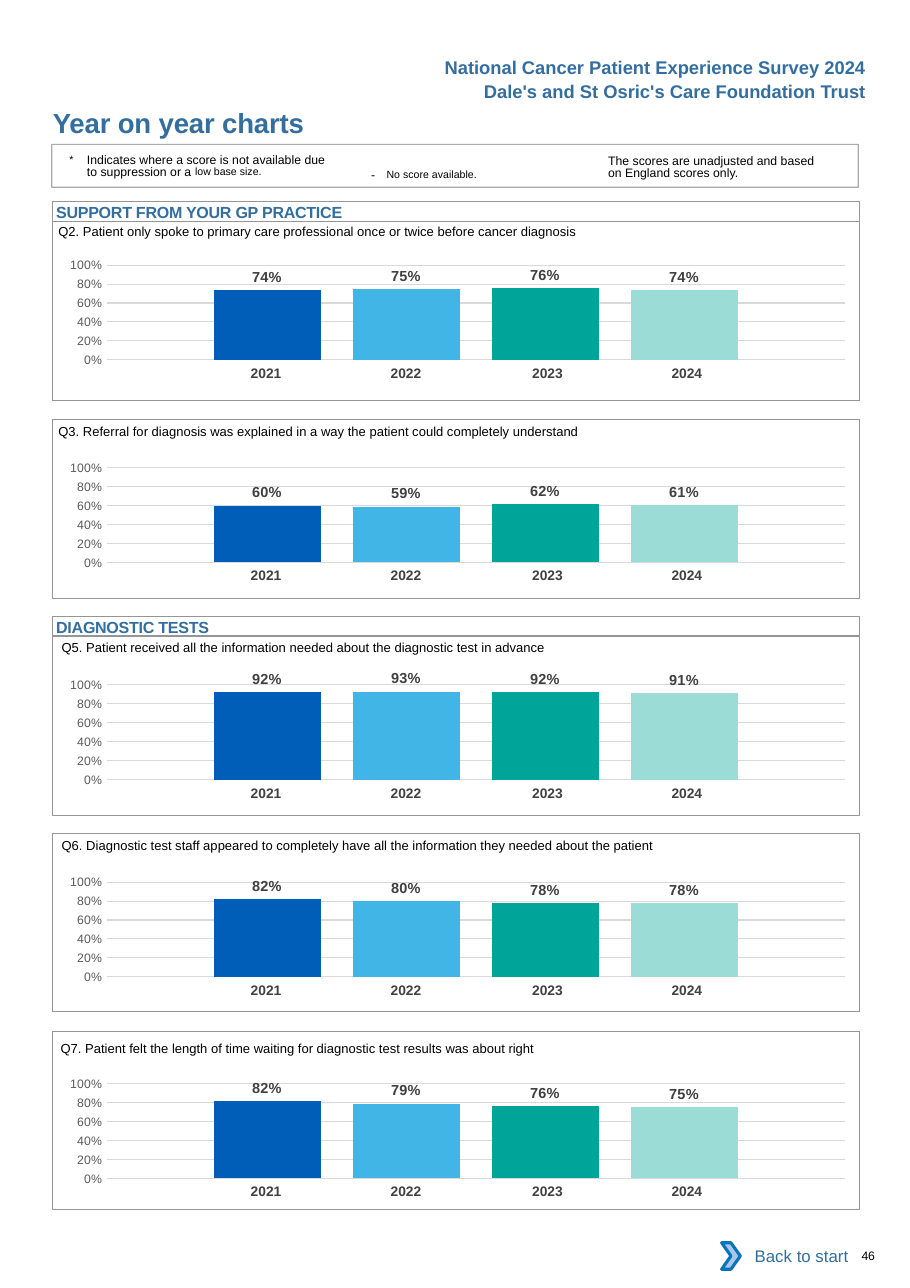
from lxml import etree
from pptx import Presentation
from pptx.chart.data import CategoryChartData
from pptx.dml.color import RGBColor
from pptx.enum.chart import XL_CHART_TYPE, XL_LABEL_POSITION, XL_TICK_MARK
from pptx.enum.shapes import MSO_SHAPE
from pptx.enum.text import MSO_ANCHOR, PP_ALIGN
from pptx.oxml import parse_xml
from pptx.oxml.ns import nsdecls, qn
from pptx.util import Inches, Pt

# Content
TITLE = "Year on year charts"
HEADERS = ["National Cancer Patient Experience Survey 2024",
           "Dale's and St Osric's Care Foundation Trust"]
YEARS = ["2021", "2022", "2023", "2024"]
SECTIONS = [("SUPPORT FROM YOUR GP PRACTICE", 1.83), ("DIAGNOSTIC TESTS", 5.59)]
# question, scores, panel top, then question left, question top and chart top
# (the last two measured from the panel top)
QUESTIONS = [
    ("Q2. Patient only spoke to primary care professional once or twice before cancer diagnosis",
     (0.74, 0.75, 0.76, 0.74), 2.01, 0.53, -0.07, 0.21),
    ("Q3. Referral for diagnosis was explained in a way the patient could completely understand",
     (0.60, 0.59, 0.62, 0.61), 3.81, 0.53, -0.06, 0.25),
    ("Q5. Patient received all the information needed about the diagnostic test in advance",
     (0.92, 0.93, 0.92, 0.91), 5.78, 0.56, -0.07, 0.25),
    ("Q6. Diagnostic test staff appeared to completely have all the information they needed "
     "about the patient",
     (0.82, 0.80, 0.78, 0.78), 7.56, 0.56, -0.05, 0.26),
    ("Q7. Patient felt the length of time waiting for diagnostic test results was about right",
     (0.82, 0.79, 0.76, 0.75), 9.36, 0.55, -0.01, 0.29),
]
# note runs: text, size, baseline shift in %, letter spacing in pt
SUPPRESSED = [("*\t", 12, 3, 0),
              ("Indicates where a score is not available due to suppression or a ", 8, 0, 0),
              ("low base size.", 12, 7, 0)]
NO_SCORE = [("- ", 8, 0, 2.6), ("No score available.", 12, 3, 0)]
UNADJUSTED = [("The scores are unadjusted and based on England scores only.", 8, 0, 0)]

# Layout and colours
LEFT, WIDTH, PANEL_H = 0.48, 7.32, 1.62
CHART_LEFT, CHART_H, YEARS_DROP = 0.39, 1.29, 1.05
YEAR_COLS = [1.27, 1.27, 1.34, 1.27]
YEAR_RIGHT_MARGINS = [0, 0, 0.04, 0.12]
PLOT = {"x": 0.079, "y": 0.145, "w": 0.915, "h": 0.666}
BLUE, GREY, BLACK = "336E9F", "939598", "000000"
BAR_COLORS = ["005EB8", "41B6E6", "00A499", "9CDCD7"]
NO_STYLE = "{2D5ABB26-0587-4C30-8999-92F81FD0307C}"

prs = Presentation()
prs.slide_width, prs.slide_height = Inches(8.26), Inches(11.69)
s = prs.slides.add_slide(prs.slide_layouts[6])


def rgb(value):
    return RGBColor.from_string(value)


def style(font, size, color, bold=False):
    font.name, font.size, font.bold = "Arial", Pt(size), bold
    font.color.rgb = rgb(color)


def set_margins(target, left, top, right, bottom):
    target.margin_left, target.margin_top = Inches(left), Inches(top)
    target.margin_right, target.margin_bottom = Inches(right), Inches(bottom)


def add_run(p, text, size, color, bold=False, shift=0, spacing=0):
    r = p.add_run()
    r.text = text
    style(r.font, size, color, bold)
    rPr = r.font._element
    if shift:
        rPr.set("baseline", str(shift * 1000))
    if spacing:
        rPr.set("spc", str(round(spacing * 100)))


def add_text(box, runs, color=BLACK, bold=False, margins=(0, 0, 0, 0), align=PP_ALIGN.LEFT):
    sp = s.shapes.add_textbox(*map(Inches, box))
    tf = sp.text_frame
    tf.word_wrap = True
    set_margins(tf, *margins)
    p = tf.paragraphs[0]
    p.alignment = align
    for text, size, shift, spacing in runs:
        add_run(p, text, size, color, bold, shift, spacing)
    return p


def add_box(box, line=None, width=0.5, fill=None, kind=MSO_SHAPE.RECTANGLE):
    sp = s.shapes.add_shape(kind, *map(Inches, box))
    sp.shadow.inherit = False
    if fill:
        sp.fill.solid()
        sp.fill.fore_color.rgb = rgb(fill)
    else:
        sp.fill.background()
    if line:
        sp.line.color.rgb = rgb(line)
        sp.line.width = Pt(width)
    else:
        sp.line.fill.background()
    return sp


def add_years(top):
    frame = s.shapes.add_table(1, len(YEARS), Inches(1.73), Inches(top),
                               Inches(sum(YEAR_COLS)), Inches(0.27))
    table = frame.table
    table.first_row = table.horz_banding = False
    table._tbl.tblPr.find(qn("a:tableStyleId")).text = NO_STYLE
    for i, year in enumerate(YEARS):
        table.columns[i].width = Inches(YEAR_COLS[i])
        cell = table.cell(0, i)
        cell.fill.background()
        set_margins(cell, 0.1, 0.05, YEAR_RIGHT_MARGINS[i], 0.05)
        p = cell.text_frame.paragraphs[0]
        p.alignment = PP_ALIGN.CENTER
        add_run(p, year, 9, "414042", True)


def add_scores(scores, top):
    data = CategoryChartData(number_format="0%")
    data.categories = ["1"]
    for i, score in enumerate(scores, 1):
        data.add_series(f"Series {i}", [score])
    chart = s.shapes.add_chart(XL_CHART_TYPE.COLUMN_CLUSTERED, Inches(CHART_LEFT), Inches(top),
                               Inches(WIDTH), Inches(CHART_H), data).chart
    chart.has_legend = chart.has_title = False
    chart.font.name, chart.font.size = "Calibri", Pt(10)
    chart.category_axis.visible = False
    axis = chart.value_axis
    axis.minimum_scale, axis.maximum_scale, axis.major_unit = 0, 1, 0.2
    axis.major_tick_mark = axis.minor_tick_mark = XL_TICK_MARK.NONE
    axis.format.line.fill.background()
    axis.major_gridlines.format.line.color.rgb = rgb("D9D9D9")
    axis.major_gridlines.format.line.width = Pt(0.75)
    axis.tick_labels.number_format = "0%"
    axis.tick_labels.number_format_is_linked = False
    style(axis.tick_labels.font, 8, "595959")
    plot = chart.plots[0]
    plot.gap_width, plot.overlap, plot.vary_by_categories = 200, -30, False
    for series, color in zip(plot.series, BAR_COLORS):
        series.format.fill.solid()
        series.format.fill.fore_color.rgb = rgb(color)
        labels = series.data_labels
        labels.show_value = True
        labels.position = XL_LABEL_POSITION.OUTSIDE_END
        labels.number_format, labels.number_format_is_linked = "0%", False
        style(labels.font, 9.5, "404040", True)
    # Fixed inner plot area
    area = chart._chartSpace.chart.plotArea
    for old in area.findall(qn("c:layout")):
        area.remove(old)
    modes = "".join(f'<c:{k}Mode val="edge"/>' for k in "xy")
    sizes = "".join(f'<c:{k} val="{v}"/>' for k, v in PLOT.items())
    area.insert(0, parse_xml(f'<c:layout {nsdecls("c")}><c:manualLayout>'
                             f'<c:layoutTarget val="inner"/>{modes}{sizes}'
                             '</c:manualLayout></c:layout>'))


# Title and page headers
add_text((0.48, 0.96, 4.5, 0.3), [(TITLE, 18, 0, -0.1)], BLUE, True)
for i, header in enumerate(HEADERS):
    add_text((3.46, 0.46 + 0.22 * i, 4.5, 0.3), [(header, 12, 0, 0)], BLUE, True,
             (0.1, 0.05, 0.1, 0.05), PP_ALIGN.RIGHT)

# Notes
p = add_text((0.63, 1.38, 2.4, 0.3), SUPPRESSED, margins=(0, 0.03, 0, 0))
p.line_spacing = Pt(8.1)
p._p.get_or_add_pPr().set("marL", str(Inches(0.16)))
p._p.get_or_add_pPr().set("indent", str(-Inches(0.16)))
add_text((3.27, 1.41, 1.83, 0.24), NO_SCORE, margins=(0.1, 0.05, 0.1, 0.05))
p = add_text((5.52, 1.38, 1.96, 0.27), UNADJUSTED, margins=(0, 0.03, 0, 0))
p.line_spacing = Pt(8.1)
frame = add_box((0.47, 1.31, WIDTH, 0.39), GREY, 0.75)
color = frame.line._ln.find(".//" + qn("a:srgbClr"))
etree.SubElement(color, qn("a:alpha")).set("val", "80000")

# Section headings
for heading, top in SECTIONS:
    add_box((LEFT, top, WIDTH, 0.18), GREY)
    add_text((LEFT + 0.03, top, WIDTH - 0.03, 0.18), [(heading, 10.5, 0, -0.15)], BLUE, True,
             (0, 0.01, 0, 0))

# Question panels
for question, scores, top, text_left, text_drop, chart_drop in QUESTIONS:
    add_text((text_left, top + text_drop, 7.2, 0.24), [(question, 8.5, 0, 0)],
             margins=(0, 0.09, 0, 0))
    add_years(top + chart_drop + YEARS_DROP)
    add_scores(scores, top + chart_drop)
    add_box((LEFT, top, WIDTH, PANEL_H), GREY)

# Footer
back = add_box((6.62, 11.19, 1.18, 0.42), fill="FFFFFF")
back.text_frame.vertical_anchor = MSO_ANCHOR.MIDDLE
p = back.text_frame.paragraphs[0]
p.alignment = PP_ALIGN.RIGHT
add_run(p, "Back to start", 11, BLUE)
add_box((6.55, 11.28, 0.17, 0.24), "0A74BB", 2, "A8C7E9", MSO_SHAPE.CHEVRON)
add_text((7.82, 11.33, 0.41, 0.13), [("46", 8, 0, -0.2)])

prs.save("out.pptx")
